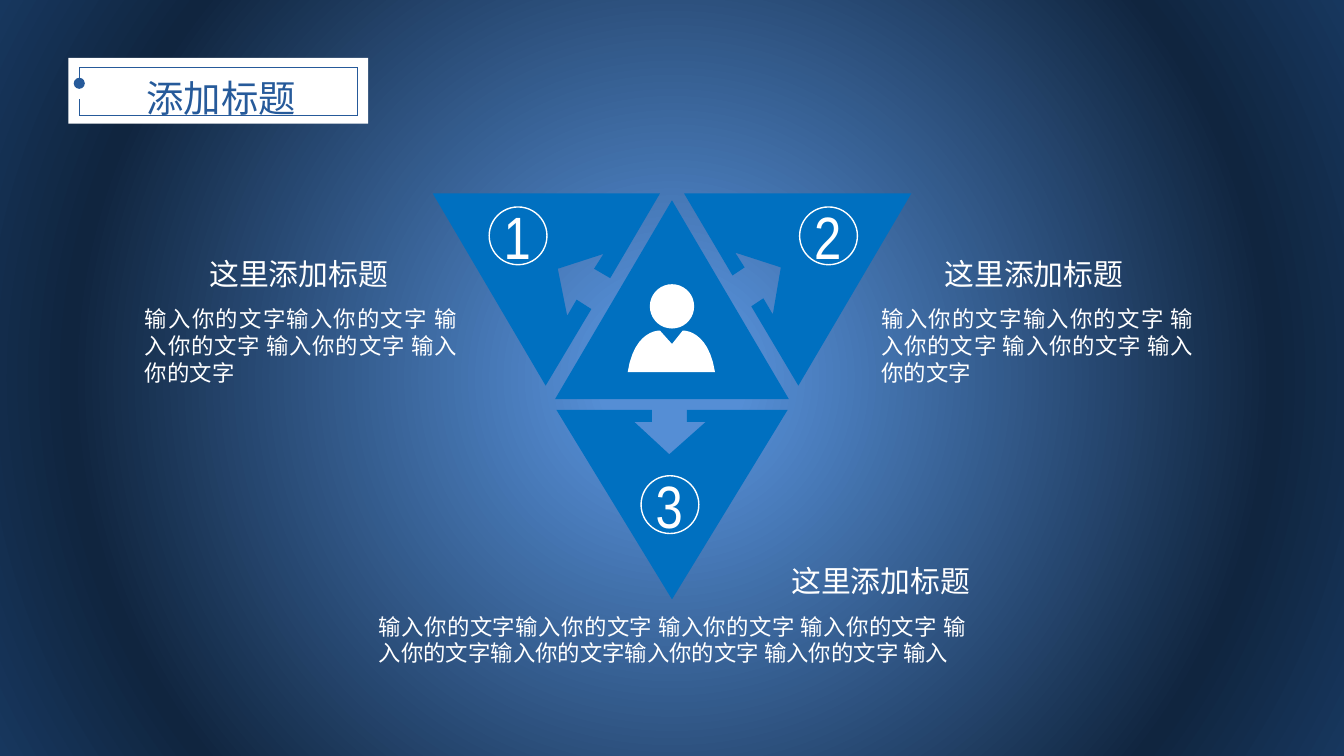
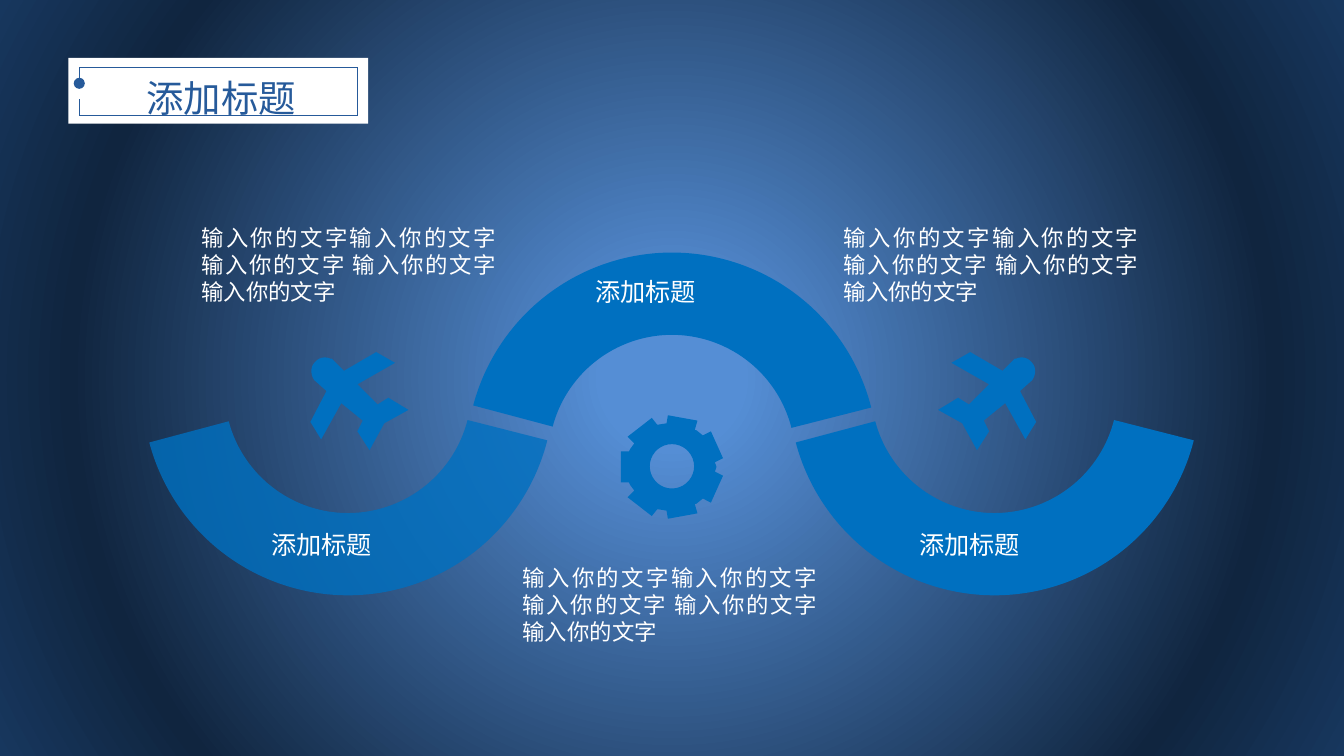
import math

import lxml.etree
import pptx
import pptx.dml.color
import pptx.enum.shapes
import pptx.enum.text
import pptx.oxml
import pptx.oxml.ns
import pptx.util

Inches = pptx.util.Inches
Shape = pptx.enum.shapes.MSO_SHAPE
Align = pptx.enum.text.PP_ALIGN
Anchor = pptx.enum.text.MSO_ANCHOR
AutoSize = pptx.enum.text.MSO_AUTO_SIZE
qn = pptx.oxml.ns.qn
theme = {
    "white": "FFFFFF", "blue": "0070C0", "title": "265A9A",
    "glow": [(9, "558ED5"), (78, "10253F"), (100, "17375E")],
    "font": "Noto Sans CJK SC", "digit_font": "Arial Narrow",
    "title_size": 20, "heading_size": 16, "label_size": 13.5,
    "body_size": 12, "digit_size": 32,
}


def write_text(box, text, size, color=theme["white"], font=theme["font"],
               align=Align.LEFT, wrap=True, spacing=None):
    frame = box.text_frame
    frame.word_wrap = wrap
    frame.auto_size = AutoSize.SHAPE_TO_FIT_TEXT
    frame.vertical_anchor = Anchor.TOP
    para = frame.paragraphs[0]
    para.alignment = align
    if spacing:
        para.line_spacing = spacing
    span = para.add_run()
    span.text = text
    span.font.size = pptx.util.Pt(size)
    span.font.color.rgb = pptx.dml.color.RGBColor.from_string(color)
    span.font.name = font
    east = lxml.etree.SubElement(span.font._element, qn("a:ea"))
    east.set("typeface", font)


def add_figure(page, form, box=None, fill=None, line=None):
    if box:
        shape = page.shapes.add_shape(form, *map(Inches, box))
    else:
        builder = None
        for contour in form:
            points = []
            for step in contour:
                if len(step) == 2:
                    points.append(step)
                    continue
                knots = [points[-1], step[:2], step[2:4], step[4:]]
                for part in range(1, 13):
                    t = part / 12
                    weights = [(1 - t) ** 3, 3 * t * (1 - t) ** 2, 3 * t * t * (1 - t), t ** 3]
                    points.append(tuple(sum(w * k[axis] for w, k in zip(weights, knots))
                                        for axis in (0, 1)))
            points = [(Inches(x), Inches(y)) for x, y in points]
            if builder is None:
                builder = page.shapes.build_freeform(*points[0], scale=1.0)
            else:
                builder.move_to(*points[0])
            builder.add_line_segments(points[1:], close=True)
        shape = builder.convert_to_shape()
    shape.shadow.inherit = False
    if fill:
        shape.fill.solid()
        shape.fill.fore_color.rgb = pptx.dml.color.RGBColor.from_string(fill)
    else:
        shape.fill.background()
    if line:
        shape.line.color.rgb = pptx.dml.color.RGBColor.from_string(line)
        shape.line.width = pptx.util.Pt(0.75)
    else:
        shape.line.fill.background()
    return shape


deck = pptx.Presentation()
deck.slide_width = Inches(10)
deck.slide_height = deck.slide_width * 9 // 16

stops = "".join(f'<a:gs pos="{place * 1000}"><a:srgbClr val="{color}"/></a:gs>'
                for place, color in theme["glow"])
glow = (f'<a:gradFill {pptx.oxml.ns.nsdecls("a")} rotWithShape="1"><a:gsLst>{stops}</a:gsLst>'
        '<a:path path="circle"><a:fillToRect l="50000" t="50000" r="50000" b="50000"/></a:path>'
        '</a:gradFill>')
left, top, right, bottom = 0.59, 0.5, 2.66, 0.86
frame_lines = [
    (left, top, right, top), (right, top, right, bottom), (right, bottom, left, bottom),
    (left, top, left, 0.62), (left, bottom, left, 0.74),
]
dotted_line = frame_lines[3]

pages = []
for number in range(2):
    page = deck.slides.add_slide(deck.slide_layouts[5])
    pages.append(page)
    page.background.fill.gradient()
    plain = page._element.find(".//" + qn("a:gradFill"))
    plain.getparent().replace(plain, pptx.oxml.parse_xml(glow))

    add_figure(page, Shape.RECTANGLE, (0.51, 0.43, 2.23, 0.49), fill=theme["white"])
    for ends in frame_lines:
        edge = page.shapes.add_connector(pptx.enum.shapes.MSO_CONNECTOR.STRAIGHT,
                                         *map(Inches, ends))
        edge.line.color.rgb = pptx.dml.color.RGBColor.from_string(theme["title"])
        edge.line.width = pptx.util.Pt(0.25)
        if ends == dotted_line:
            lxml.etree.SubElement(edge.line._get_or_add_ln(), qn("a:tailEnd")).set("type", "oval")
        lxml.etree.SubElement(edge._element.spPr, qn("a:effectLst"))

    title = page.shapes.title
    title.left, title.top, title.width, title.height = map(Inches, (0.63, 0.34, 2.03, 0.55))
    write_text(title, "添加标题", theme["title_size"], color=theme["title"],
               align=Align.CENTER, spacing=1.5)
    page.shapes._spTree.append(title._element)

triangles, wave = pages
circle = [(math.cos(math.radians(a)) * 0.165, math.sin(math.radians(a)) * 0.165)
          for a in range(0, 360, 10)]

lower = [(5, 4.46), (5.86, 3.05), (5.11, 3.05), (5.11, 3.14), (5.25, 3.14), (4.98, 3.38),
         (4.72, 3.14), (4.85, 3.14), (4.85, 3.05), (4.14, 3.05)]
upper_right = [(5.94, 2.87), (6.78, 1.44), (5.09, 1.44), (5.45, 2.05), (5.54, 1.99),
               (5.47, 1.88), (5.81, 1.99), (5.75, 2.34), (5.68, 2.22), (5.59, 2.28)]
upper_left = [(4.06, 2.87), (4.4, 2.3), (4.29, 2.23), (4.22, 2.35), (4.15, 2), (4.49, 1.89),
              (4.42, 2), (4.54, 2.07), (4.91, 1.44), (3.22, 1.44)]
for outline in (lower, upper_right, upper_left):
    add_figure(triangles, [outline], fill=theme["blue"])
add_figure(triangles, Shape.ISOSCELES_TRIANGLE, (4.13, 1.49, 1.74, 1.48), fill=theme["blue"])

head = [(5 + x, 2.28 + y) for x, y in circle]
body = [(5.08, 2.46), (5, 2.56), (4.91, 2.46), (4.91, 2.46, 4.72, 2.45, 4.67, 2.77),
        (5.32, 2.77), (5.27, 2.45, 5.08, 2.46, 5.08, 2.46)]
add_figure(triangles, [head, body], fill=theme["white"])

for digit, x, y in (("1", 3.64, 1.54), ("2", 5.95, 1.54), ("3", 4.77, 3.54)):
    add_figure(triangles, Shape.OVAL, (x, y, 0.43, 0.43), line=theme["white"])
    box = triangles.shapes.add_textbox(*map(Inches, (x + 0.01, y - 0.1, 0.4, 0.64)))
    write_text(box, digit, theme["digit_size"], font=theme["digit_font"], wrap=False)

sentence = "输入你的文字输入你的文字 输入你的文字 输入你的文字 输入你的文字"
long_sentence = sentence + "输入你的文字输入你的文字 输入你的文字 输入"
for heading_x, x, y, width, height, text in (
    (1.46, 0.98, 2.22, 2.52, 0.71, sentence),
    (6.93, 6.46, 2.22, 2.52, 0.71, sentence),
    (5.79, 2.72, 4.51, 4.57, 0.5, long_sentence),
):
    box = triangles.shapes.add_textbox(*map(Inches, (heading_x, y - 0.37, 1.57, 0.37)))
    write_text(box, "这里添加标题", theme["heading_size"])
    box = triangles.shapes.add_textbox(*map(Inches, (x, y, width, height)))
    write_text(box, text, theme["body_size"], align=Align.JUSTIFY)

for x, y, flipped, opacity in ((3.47, 1.88, False, 100), (5.87, 1.37, True, 100),
                               (1.06, 1.37, True, 80)):
    arc = add_figure(wave, Shape.BLOCK_ARC, (x, y, 3.06, 3.06), fill=theme["blue"])
    for index, value in enumerate((116.92, 207.45, 0.2)):
        arc.adjustments[index] = value
    if flipped:
        arc._element.spPr.find(qn("a:xfrm")).set("flipV", "1")
    if opacity < 100:
        color = arc._element.spPr.find(qn("a:solidFill"))[0]
        lxml.etree.SubElement(color, qn("a:alpha")).set("val", str(opacity * 1000))

hole = [(5 + x, 3.47 + y) for x, y in circle]
teeth = [(4.62, 3.36), (4.68, 3.36), (4.69, 3.34), (4.72, 3.3), (4.67, 3.25), (4.85, 3.11),
         (4.89, 3.16), (4.9, 3.16), (4.96, 3.15), (4.97, 3.09), (5.19, 3.13), (5.17, 3.2),
         (5.18, 3.2), (5.23, 3.24), (5.29, 3.21), (5.38, 3.41), (5.32, 3.44), (5.33, 3.47)]
mirrored_teeth = [(x, 6.95 - y) for x, y in reversed(teeth)]
add_figure(wave, [hole, teeth + mirrored_teeth], fill=theme["blue"])

plane = [(2.34, 2.7), (2.37, 2.66, 2.42, 2.65, 2.46, 2.67), (2.47, 2.67), (2.56, 2.76),
         (2.8, 2.62), (2.94, 2.7), (2.66, 2.86), (2.81, 3.01), (2.89, 2.96), (3.04, 3.05),
         (2.86, 3.15), (2.75, 3.35), (2.66, 3.21), (2.7, 3.13), (2.54, 3), (2.39, 3.27),
         (2.31, 3.14), (2.43, 2.91), (2.34, 2.83), (2.31, 2.79, 2.31, 2.73, 2.34, 2.7)]
mirrored_plane = [tuple(value if index % 2 else 10.02 - value
                        for index, value in enumerate(step)) for step in plane]
for outline in (plane, mirrored_plane):
    add_figure(wave, [outline], fill=theme["blue"])

for x, y in ((1.92, 3.89), (4.33, 2.01), (6.74, 3.89)):
    box = wave.shapes.add_textbox(*map(Inches, (x, y, 1.34, 0.33)))
    write_text(box, "添加标题", theme["label_size"], align=Align.JUSTIFY)
for x, y in ((1.4, 1.62), (3.79, 4.15), (6.18, 1.62)):
    box = wave.shapes.add_textbox(*map(Inches, (x, y, 2.39, 0.71)))
    write_text(box, sentence, theme["body_size"], align=Align.JUSTIFY)

deck.save("out.pptx")
